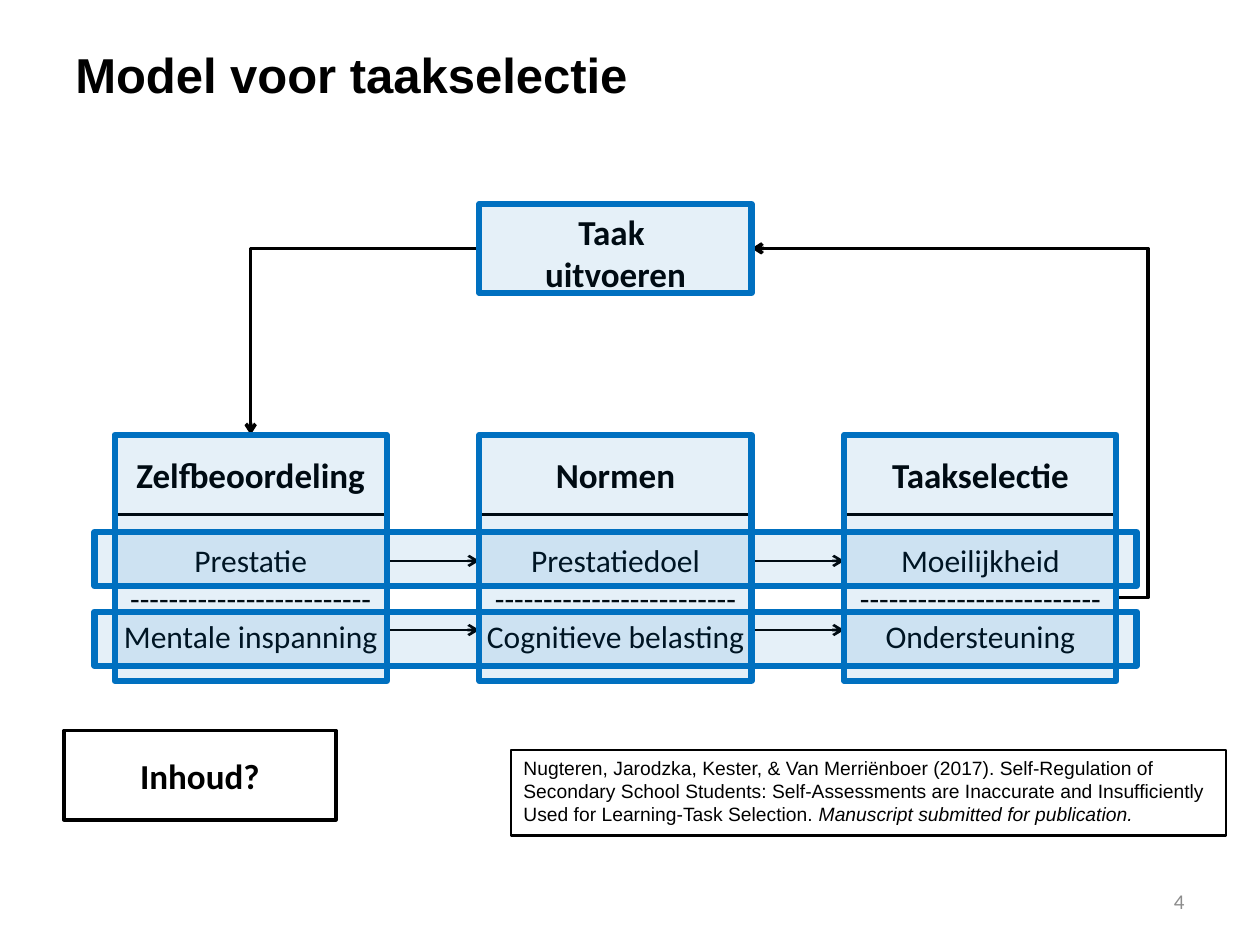
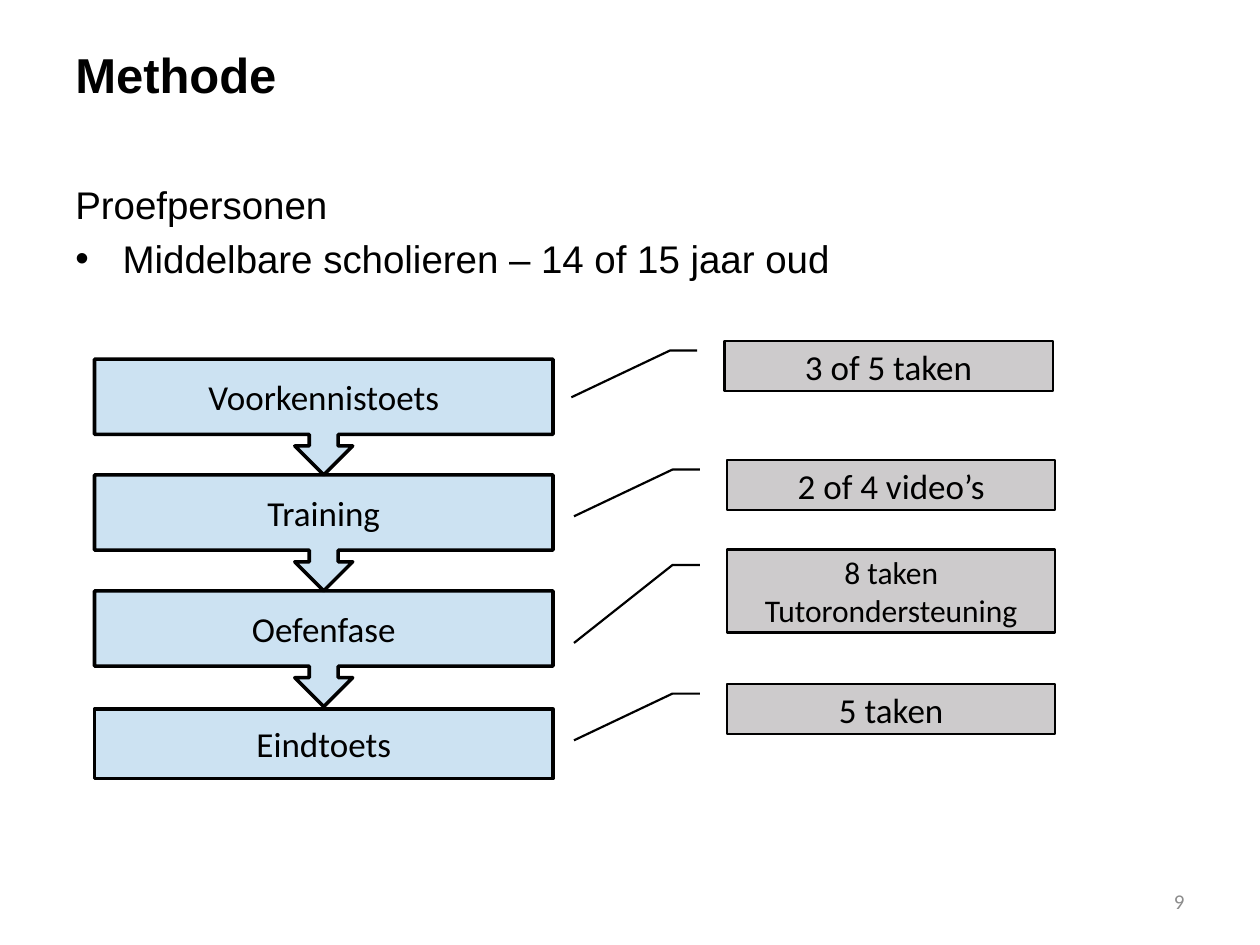
from lxml import etree
from pptx import Presentation
from pptx.dml.color import RGBColor
from pptx.enum import shapes as sh, text as tx
from pptx.oxml import ns
from pptx.util import Pt

BLACK = RGBColor(0, 0, 0)
BLUE = RGBColor(0x00, 0x70, 0xC0)
GREY = RGBColor(0xCD, 0xCB, 0xCC)
PALE = RGBColor(0x8C, 0x8C, 0x8C)
SANS, BODY = "Arial", "Calibri"
KIND = sh.MSO_SHAPE
LEFT, MID, RIGHT = tx.PP_ALIGN.LEFT, tx.PP_ALIGN.CENTER, tx.PP_ALIGN.RIGHT
TOP, HALF = tx.MSO_ANCHOR.TOP, tx.MSO_ANCHOR.MIDDLE
PAD = (7.2, 3.6)

TASK = ["Taak ", "uitvoeren"]
DASH = "-" * 25
COLS = [
    ("Zelfbeoordeling", "Prestatie", "Mentale inspanning"),
    ("Normen", "Prestatiedoel", "Cognitieve belasting"),
    ("Taakselectie", "Moeilijkheid", "Ondersteuning"),
]
CITE = [[
    ("Nugteren, Jarodzka, Kester, & Van Merriënboer (2017). Self-Regulation of "
     "Secondary School Students: Self-Assessments are Inaccurate and "
     "Insufficiently Used for Learning-Task Selection. ", False),
    ("Manuscript submitted for publication.", True),
]]
GROUP = ["Proefpersonen", "Middelbare scholieren – 14 of 15 jaar oud"]
STEPS = ["Voorkennistoets", "Training", "Oefenfase", "Eindtoets"]
NOTES = [
    (414, 195, 28.5, 20, ["3 of 5 taken"]),
    (415.5, 263, 28.5, 20, ["2 of 4 video’s"]),
    (415.5, 314, 47.5, 18, ["8 taken", "Tutorondersteuning"]),
    (415.5, 391, 28.5, 20, ["5 taken"]),
]


def write(shape, paras, size, font=BODY, bold=False, color=BLACK,
          align=MID, anchor=HALF, pad=PAD):
    frame = shape.text_frame
    frame.word_wrap = True
    frame.vertical_anchor = anchor
    frame.margin_left = frame.margin_right = Pt(pad[0])
    frame.margin_top = frame.margin_bottom = Pt(pad[1])
    for i, runs in enumerate(paras):
        para = frame.paragraphs[0] if i == 0 else frame.add_paragraph()
        para.alignment = align
        for words, slant in [(runs, False)] if isinstance(runs, str) else runs:
            run = para.add_run()
            run.text = words
            face = run.font
            face.name, face.size, face.bold = font, Pt(size), bold
            face.italic = slant
            face.color.rgb = color
    return frame


def label(slide, place, paras, size, **style):
    return write(slide.shapes.add_textbox(*map(Pt, place)), paras, size, **style)


def box(slide, place, kind=KIND.RECTANGLE, fill=None, alpha=None,
        line=BLACK, width=2):
    shape = slide.shapes.add_shape(kind, *map(Pt, place))
    shape.shadow.inherit = False
    shape.line.color.rgb = line
    shape.line.width = Pt(width)
    if fill is None:
        shape.fill.background()
        return shape
    shape.fill.solid()
    shape.fill.fore_color.rgb = fill
    if alpha:
        tone = shape.fill._xPr.find(".//" + ns.qn("a:srgbClr"))
        etree.SubElement(tone, ns.qn("a:alpha")).set("val", str(alpha * 1000))
    return shape


def arrow(slide, start, end, width=1.5, bend=None, adj=None):
    kind = sh.MSO_CONNECTOR.ELBOW if bend else sh.MSO_CONNECTOR.STRAIGHT
    link = slide.shapes.add_connector(kind, *map(Pt, start + end))
    link.line.color.rgb = BLACK
    link.line.width = Pt(width)
    props = link._element.spPr
    tail = etree.SubElement(link.line._get_or_add_ln(), ns.qn("a:tailEnd"))
    tail.set("type", "arrow")
    etree.SubElement(props, ns.qn("a:effectLst"))
    if bend:
        geom = props.find(ns.qn("a:prstGeom"))
        geom.set("prst", bend)
        if adj:
            guide = etree.SubElement(geom.find(ns.qn("a:avLst")), ns.qn("a:gd"))
            guide.set("name", "adj1")
            guide.set("fmla", f"val {adj}")


def page(deck, title, number):
    slide = deck.slides.add_slide(deck.slide_layouts[6])
    label(slide, (36, 21.6, 648, 90), [title], 28, font=SANS, bold=True,
          align=LEFT, anchor=TOP)
    label(slide, (516, 500.5, 168, 28.8), [number], 12, color=PALE, align=RIGHT)
    return slide


def model(deck):
    slide = page(deck, "Model voor taakselectie", "4")
    wide, step, top, head, tall = 155.5, 208.5, 248.5, 45.5, 140.5
    lefts = [65.5 + step * i for i in range(len(COLS))]
    task = (lefts[1], 116.5, wide, 51)
    mid = task[1] + task[3] / 2
    for x in lefts[:-1]:
        for y in (320.5, 360):
            arrow(slide, (x + wide, y), (x + step, y))
    arrow(slide, (lefts[2] + wide, 341.5), (lefts[1] + wide, mid), 2,
          "bentConnector3", -8600)
    arrow(slide, (lefts[1], mid), (lefts[0] + wide / 2, top), 2, "bentConnector2")
    write(box(slide, task), TASK, 20, bold=True, anchor=TOP)
    for x, (name, first, last) in zip(lefts, COLS):
        write(box(slide, (x, top, wide, head)), [name], 20, bold=True, pad=(3, 3))
        write(box(slide, (x, top + head, wide, tall - head)),
              [first, DASH, last], 18, pad=(3, 3))
    tints = [(x, top, wide, tall) for x in lefts] + [task]
    tints += [(54, y, 595.5, 31) for y in (304, 349.5)]
    for place in tints:
        box(slide, place, fill=BLUE, alpha=10, line=BLUE, width=3.5)
    write(box(slide, (292, 428.5, 408.5, 49), width=1.5), CITE, 11, font=SANS,
          align=LEFT, anchor=TOP)
    write(box(slide, (36.5, 417.5, wide, 51)), ["Inhoud?"], 20, bold=True)


def method(deck):
    slide = page(deck, "Methode", "9")
    frame = label(slide, (36, 100, 648, 382), GROUP, 22, font=SANS,
                  align=LEFT, anchor=TOP)
    item = frame.paragraphs[1]
    props = item._p.get_or_add_pPr()
    props.set("marL", str(Pt(27)))
    props.set("indent", str(Pt(-27)))
    etree.SubElement(props, ns.qn("a:buFont")).set("typeface", SANS)
    etree.SubElement(props, ns.qn("a:buChar")).set("char", "•")
    item.space_before = Pt(4.4)
    for i, name in enumerate(STEPS):
        last = i == len(STEPS) - 1
        kind = KIND.RECTANGLE if last else KIND.DOWN_ARROW_CALLOUT
        place = (54, 405.2, 262, 39.6) if last else (54, 205.2 + 66.2 * i, 262, 66.2)
        write(box(slide, place, kind, BLUE, 20), [name], 20, pad=(0, 0))
    for x, y, high, size, words in NOTES:
        note = box(slide, (x, y, 187.5, high), KIND.LINE_CALLOUT_2, GREY, width=1.25)
        write(note, words, size, pad=(0, 0))


def main():
    deck = Presentation()
    deck.slide_width, deck.slide_height = Pt(720), Pt(540)
    model(deck)
    method(deck)
    deck.save("out.pptx")


if __name__ == "__main__":
    main()
